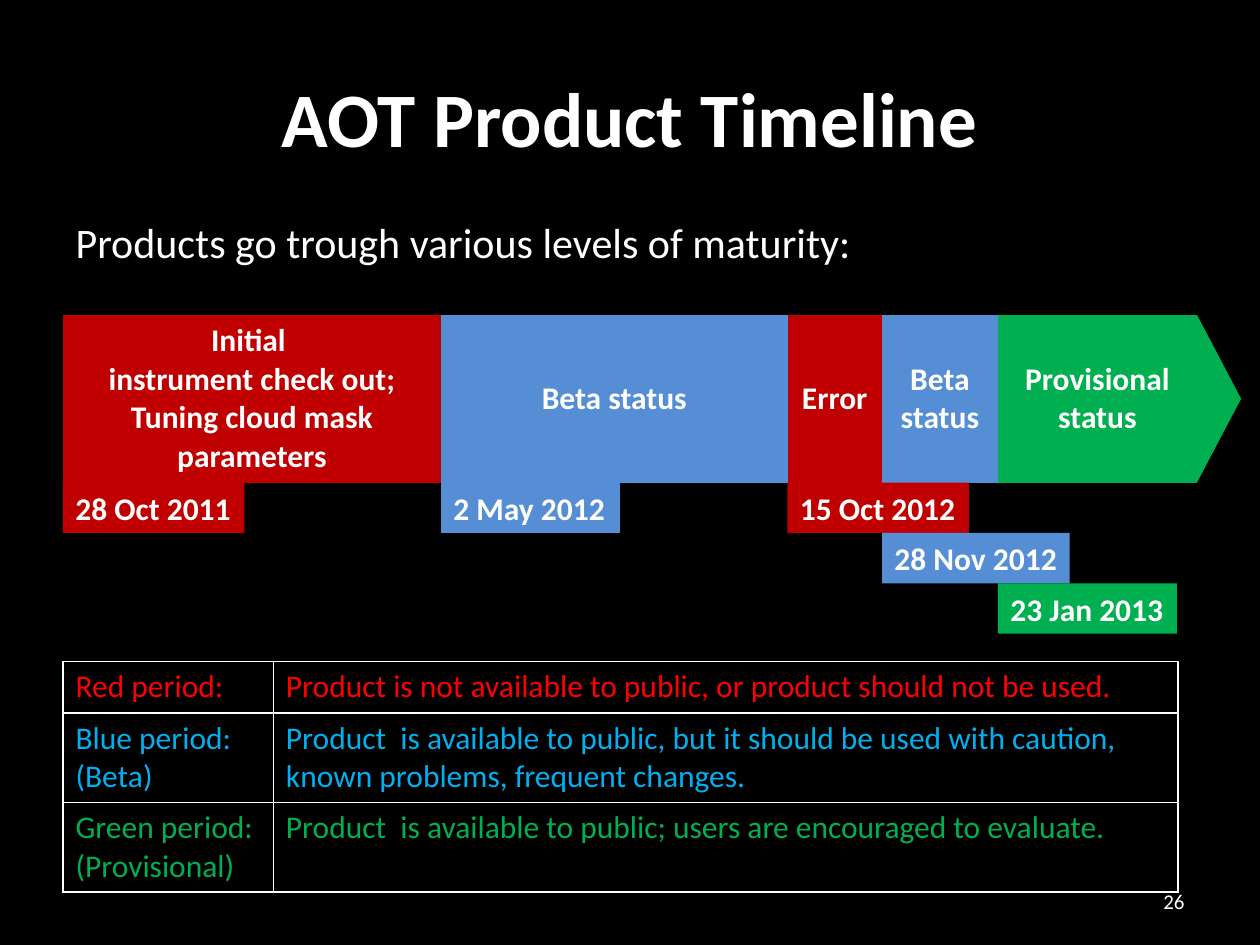
from lxml.etree import SubElement
from pptx import Presentation
from pptx.dml.color import RGBColor
from pptx.enum.shapes import MSO_SHAPE
from pptx.enum.text import MSO_ANCHOR, PP_ALIGN
from pptx.oxml.ns import qn
from pptx.util import Inches, Pt

WHITE, RED, BLUE, GREEN = "FFFFFF", "C00000", "558ED5", "00B050"
NO_STYLE = "{2D5ABB26-0587-4C30-8999-92F81FD0307C}"
LEFT, WIDTH = 0.5, 9
BAR_TOP, BAR_HEIGHT = 2.5, 1.33
TAG_HEIGHT = 0.4


def paint(fill, color):
    fill.solid()
    fill.fore_color.rgb = RGBColor.from_string(color)


def write(frame, text, size, color=WHITE, bold=False, align=PP_ALIGN.LEFT,
          anchor=MSO_ANCHOR.TOP):
    frame.text = text
    frame.vertical_anchor = anchor
    for para in frame.paragraphs:
        para.alignment = align
        for span in para.runs:
            span.font.name = "Calibri"
            span.font.size = Pt(size)
            span.font.bold = bold
            paint(span.font.fill, color)


deck = Presentation()
deck.slide_width, deck.slide_height = Inches(10), Inches(7.5)
page = deck.slides.add_slide(deck.slide_layouts[1])
paint(page.background.fill, "000000")

# Title and introduction
title, intro = page.placeholders
title.left, title.top, title.width, title.height = map(Inches, (LEFT, 0.3, WIDTH, 1.25))
write(title.text_frame, "AOT Product Timeline", 44, bold=True,
      align=PP_ALIGN.CENTER, anchor=MSO_ANCHOR.MIDDLE)
intro.left, intro.top, intro.width, intro.height = map(Inches, (LEFT, 1.67, WIDTH, 0.5))
write(intro.text_frame, "Products go trough various levels of maturity:", 24)
intro_para = intro.text_frame.paragraphs[0]
intro_para.space_before = Pt(0)
properties = intro_para._p.get_or_add_pPr()
properties.set("marL", "0")
properties.set("indent", "0")
SubElement(properties, qn("a:buNone"))

# Timeline: width, colour, status, start date, tag width, tag level
periods = [
    (3, RED, "Initial \ninstrument check out;\nTuning cloud mask parameters",
     "28 Oct 2011", 1.44, 0),
    (2.75, BLUE, "Beta status", "2 May 2012", 1.42, 0),
    (0.75, RED, "Error", "15 Oct 2012", 1.44, 0),
    (0.92, BLUE, "Beta status", "28 Nov 2012", 1.49, 1),
    (1.58, GREEN, "Provisional status", "23 Jan 2013", 1.42, 2),
]
bar_frame = page.shapes.add_table(1, len(periods), Inches(LEFT), Inches(BAR_TOP),
                                  Inches(WIDTH), Inches(BAR_HEIGHT))
bar = bar_frame.table

# Legend: colour, period, meaning
legend = [
    ("FF0000", "Red period:",
     "Product is not available to public, or product should not be used."),
    ("00B0F0", "Blue period:\n(Beta)",
     "Product  is available to public, but it should be used with caution, "
     "known problems, frequent changes."),
    (GREEN, "Green period:\n(Provisional)",
     "Product  is available to public; users are encouraged to evaluate."),
]
legend_frame = page.shapes.add_table(len(legend), 2, Inches(LEFT), Inches(5.25),
                                     Inches(8.85), Inches(1.81))
key = legend_frame.table

for table in (bar, key):
    table.first_row = table.horz_banding = False
    table._tbl.tblPr.find(qn("a:tableStyleId")).text = NO_STYLE

# Status cells with their date tags below
start = LEFT
for index, (width, color, status, date, tag_width, level) in enumerate(periods):
    bar.columns[index].width = Inches(width)
    cell = bar.cell(0, index)
    paint(cell.fill, color)
    write(cell.text_frame, status, 18, bold=True, align=PP_ALIGN.CENTER)
    cell.vertical_anchor = MSO_ANCHOR.MIDDLE
    tag = page.shapes.add_shape(
        MSO_SHAPE.RECTANGLE, Inches(start), Inches(BAR_TOP + BAR_HEIGHT + level * TAG_HEIGHT),
        Inches(tag_width), Inches(TAG_HEIGHT))
    tag.shadow.inherit = False
    paint(tag.fill, color)
    tag.line.fill.background()
    tag.text_frame.word_wrap = False
    write(tag.text_frame, date, 18, bold=True)
    start += width
last_cell = bar.cell(0, len(periods) - 1)
last_cell.margin_left = last_cell.margin_right = 0
last_cell.margin_top = last_cell.margin_bottom = 0

# Arrow tip at the end of the bar, turned to point right
tip_length = 0.35
tip = page.shapes.add_shape(
    MSO_SHAPE.ISOSCELES_TRIANGLE,
    Inches(LEFT + WIDTH + (tip_length - BAR_HEIGHT) / 2),
    Inches(BAR_TOP + (BAR_HEIGHT - tip_length) / 2),
    Inches(BAR_HEIGHT), Inches(tip_length))
tip.rotation = 90
tip.shadow.inherit = False
paint(tip.fill, GREEN)
tip.line.fill.background()

# Legend cells with white borders
for column, width in zip(key.columns, (1.67, 7.18)):
    column.width = Inches(width)
for row, height, (color, *texts) in zip(key.rows, (0.41, 0.7, 0.7), legend):
    row.height = Inches(height)
    for cell, text in zip(row.cells, texts):
        write(cell.text_frame, text, 18, color)
        cell_properties = cell._tc.get_or_add_tcPr()
        for side in ("a:lnL", "a:lnR", "a:lnT", "a:lnB"):
            border = SubElement(cell_properties, qn(side), w=str(Pt(1)))
            border_fill = SubElement(border, qn("a:solidFill"))
            SubElement(border_fill, qn("a:srgbClr"), val=WHITE)
        cell.fill.background()

# Slide number
number = page.shapes.add_textbox(Inches(7.17), Inches(6.95), Inches(2.33), Inches(0.4))
number.text_frame.word_wrap = True
write(number.text_frame, "26", 12, align=PP_ALIGN.RIGHT, anchor=MSO_ANCHOR.MIDDLE)

deck.save("out.pptx")
